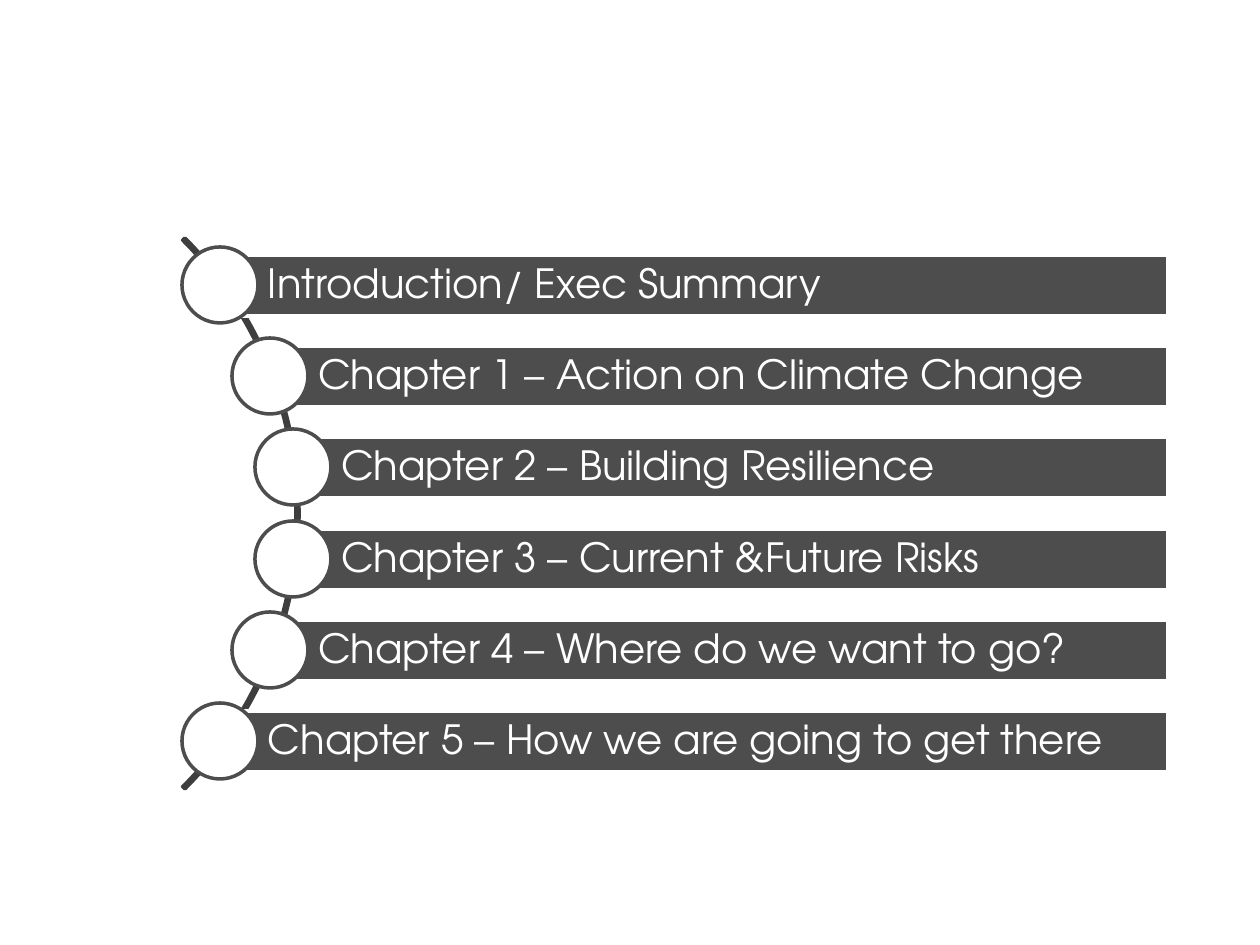
from lxml.etree import SubElement
from pptx import Presentation
from pptx.dml.color import RGBColor
from pptx.enum.shapes import MSO_SHAPE
from pptx.enum.text import MSO_ANCHOR, PP_ALIGN
from pptx.util import Pt

SCALE = 914400 / 126
FONT = "TeX Gyre Adventor"
DARK, ARC_LINE, WHITE = "4D4D4D", "3E3E3E", "FFFFFF"
CHAPTERS = [
    ("Introduction/ Exec Summary", 0),
    ("Chapter 1 – Action on Climate Change", 50),
    ("Chapter 2 – Building Resilience", 73),
    ("Chapter 3 – Current &Future Risks", 73),
    ("Chapter 4 – Where do we want to go?", 50),
    ("Chapter 5 – How we are going to get there", 0),
]


def px(n):
    return round(n * SCALE)


def rgb(value):
    return RGBColor.from_string(value)


def set_attrs(obj, values):
    for name, value in values.items():
        setattr(obj, name, value)


def add_outlined(s, kind, box, fill, line):
    sp = s.shapes.add_shape(kind, *map(px, box))
    sp.shadow.inherit = False
    if fill:
        sp.fill.solid()
        sp.fill.fore_color.rgb = rgb(fill)
    else:
        sp.fill.background()
    sp.line.color.rgb = rgb(line)
    sp.line.width = Pt(2)
    return sp


def add_arc(s, x, y, size):
    sp = add_outlined(s, MSO_SHAPE.BLOCK_ARC, (x, y, size, size), None, ARC_LINE)
    for i, value in enumerate((189, 27, 0.004)):
        sp.adjustments[i] = value


def add_chapter(s, x, y, w, h, text):
    radius = h // 2
    bar = (x + radius, y + 8, w - radius, h - 15)
    sp = add_outlined(s, MSO_SHAPE.RECTANGLE, bar, DARK, WHITE)
    tf = sp.text_frame
    set_attrs(tf, {
        "word_wrap": True, "vertical_anchor": MSO_ANCHOR.MIDDLE,
        "margin_left": px(48), "margin_right": px(8),
        "margin_top": px(8), "margin_bottom": px(8),
    })
    p = tf.paragraphs[0]
    set_attrs(p, {"alignment": PP_ALIGN.LEFT, "line_spacing": 0.9})
    r = p.add_run()
    r.text = text
    set_attrs(r.font, {"name": FONT, "size": Pt(23)})
    r.font.color.rgb = rgb(WHITE)
    add_outlined(s, MSO_SHAPE.OVAL, (x, y, h, h), WHITE, DARK)


def add_chapter_list(s, x, y, w, h):
    circle, arc = 76, 779
    add_arc(s, x - 662, y + (h - arc) // 2 + 1, arc)
    pitch = (h - circle) / (len(CHAPTERS) - 1)
    for i, (text, inset) in enumerate(CHAPTERS):
        add_chapter(s, x + inset, y + round(i * pitch), w - inset, circle, text)


def main():
    prs = Presentation()
    set_attrs(prs, {"slide_width": px(1260), "slide_height": px(945)})
    s = prs.slides.add_slide(prs.slide_layouts[6])
    add_chapter_list(s, 182, 247, 986, 532)
    prs.save("out.pptx")


if __name__ == "__main__":
    main()
